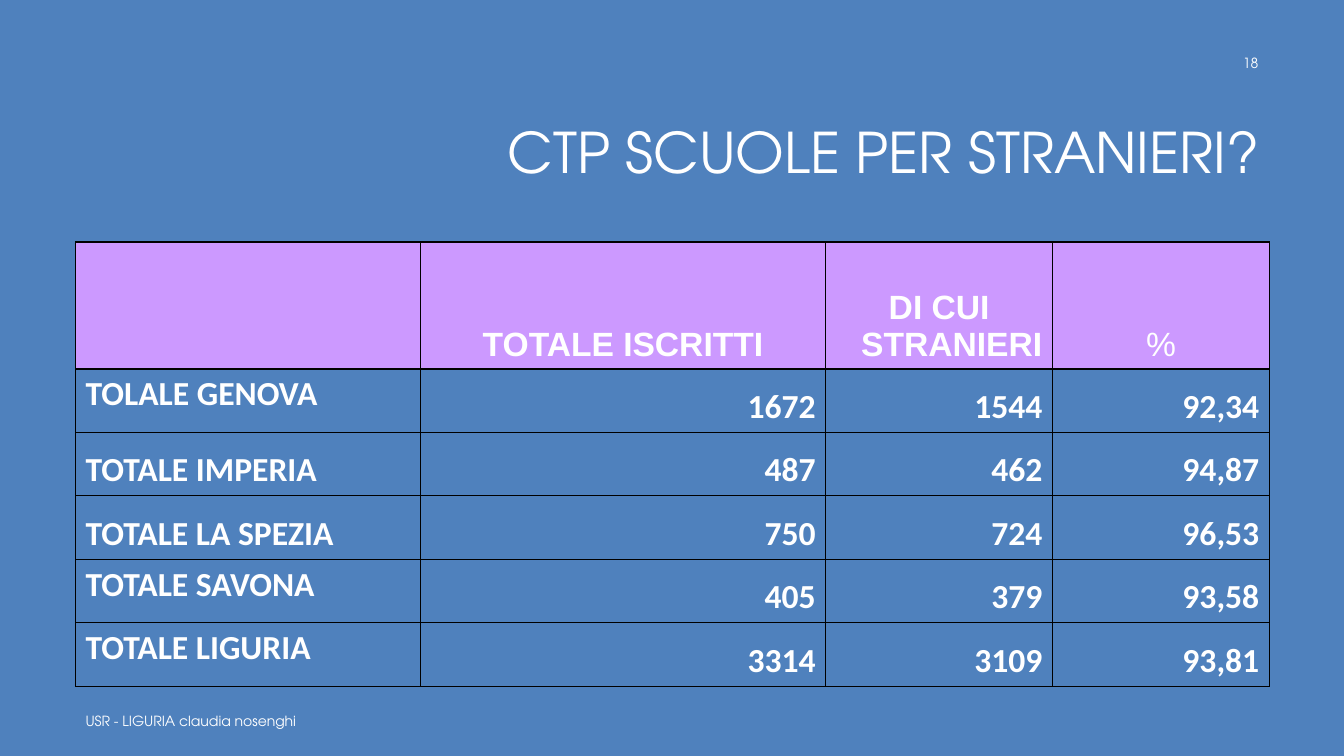
from lxml import etree
from pptx import Presentation
from pptx.dml.color import RGBColor
from pptx.enum.text import MSO_ANCHOR, MSO_AUTO_SIZE, PP_ALIGN
from pptx.oxml.ns import qn
from pptx.util import Inches, Pt

LEFT, CENTER, RIGHT = PP_ALIGN.LEFT, PP_ALIGN.CENTER, PP_ALIGN.RIGHT
TOP, MIDDLE, BOTTOM = MSO_ANCHOR.TOP, MSO_ANCHOR.MIDDLE, MSO_ANCHOR.BOTTOM
NO_AUTOFIT = MSO_AUTO_SIZE.NONE

# Content
TITLE = "CTP SCUOLE PER STRANIERI?"
FOOTER = "USR - LIGURIA claudia nosenghi"
PAGE_NUMBER = "18"
HEADINGS = ("", "TOTALE ISCRITTI", "DI CUI STRANIERI", "%")
PROVINCES = [
    ("TOLALE GENOVA", "1672", "1544", "92,34"),
    ("TOTALE IMPERIA", "487", "462", "94,87"),
    ("TOTALE LA SPEZIA", "750", "724", "96,53"),
    ("TOTALE SAVONA", "405", "379", "93,58"),
    ("TOTALE LIGURIA", "3314", "3109", "93,81"),
]
TOP_LABELS = {"TOLALE GENOVA", "TOTALE SAVONA", "TOTALE LIGURIA"}

# Format
COLORS = {"background": "4F81BD", "heading": "CC99FF", "text": "FFFFFF", "border": "000000"}
DISPLAY_FONT = "TeX Gyre Adventor"
TITLE_FONT = {"name": DISPLAY_FONT, "size": Pt(40), "bold": False}
SMALL_FONT = {"name": DISPLAY_FONT, "size": Pt(10)}
HEADING_FONT = {"name": "Arial", "size": Pt(24), "bold": True}
PERCENT_FONT = {**HEADING_FONT, "bold": False}
BODY_FONT = {"name": "Calibri", "size": Pt(24), "bold": True}
COLUMN_WIDTHS = (3.42, 4.02, 2.25, 2.15)
HEADING_HEIGHT, PROVINCE_HEIGHT = 1.26, 0.63


def color(name):
    return RGBColor.from_string(COLORS[name])


def write(frame, text, font_format, align):
    paragraph = frame.paragraphs[0]
    paragraph.text = text
    paragraph.alignment = align
    for key, value in font_format.items():
        setattr(paragraph.font, key, value)
    paragraph.font.color.rgb = color("text")
    return paragraph


def set_up(frame):
    for key, value in {"word_wrap": True, "auto_size": NO_AUTOFIT,
                       "vertical_anchor": MIDDLE}.items():
        setattr(frame, key, value)


def add_borders(cell):
    properties = cell._tc.get_or_add_tcPr()
    for side in ("a:lnL", "a:lnR", "a:lnT", "a:lnB"):
        line = etree.SubElement(properties, qn(side), w=str(Pt(1)))
        fill = etree.SubElement(line, qn("a:solidFill"))
        etree.SubElement(fill, qn("a:srgbClr"), val=COLORS["border"])


def fill_cell(cell, text, row, column):
    heading = row == 0
    add_borders(cell)
    if heading:
        cell.fill.solid()
        cell.fill.fore_color.rgb = color("heading")
        font_format = PERCENT_FONT if text == "%" else HEADING_FONT
        align = CENTER
    else:
        cell.fill.background()
        font_format = BODY_FONT
        align = RIGHT if column else LEFT
    cell.vertical_anchor = TOP if text in TOP_LABELS else BOTTOM
    if text:
        paragraph = write(cell.text_frame, text, font_format, align)
        indents = paragraph._p.get_or_add_pPr()
        indents.set("marL", str(Inches(0.25)))
        indents.set("indent", str(Inches(-0.25)))


# Slide
deck = Presentation()
deck.slide_width, deck.slide_height = Inches(13.33), Inches(7.5)
slide = deck.slides.add_slide(deck.slide_layouts[5])
slide.background.fill.solid()
slide.background.fill.fore_color.rgb = color("background")

# Title
title = slide.shapes.title
title.left, title.top = Inches(3.17), Inches(0.84)
title.width, title.height = Inches(9.42), Inches(1.41)
set_up(title.text_frame)
write(title.text_frame, TITLE, TITLE_FONT, RIGHT).line_spacing = 0.9

# Footer and page number
for text, left, top, width, align in (
    (FOOTER, 0.75, 6.95, 8.5, LEFT),
    (PAGE_NUMBER, 9.58, 0.42, 3, RIGHT),
):
    label = slide.shapes.add_textbox(Inches(left), Inches(top), Inches(width), Inches(0.4))
    set_up(label.text_frame)
    write(label.text_frame, text, SMALL_FONT, align)

# Enrolment table
records = [HEADINGS, *PROVINCES]
row_heights = [HEADING_HEIGHT] + [PROVINCE_HEIGHT] * len(PROVINCES)
enrolment = slide.shapes.add_table(
    len(records), len(HEADINGS), Inches(0.75), Inches(2.4),
    Inches(sum(COLUMN_WIDTHS)), Inches(sum(row_heights))).table
enrolment.first_row = enrolment.horz_banding = False
for column, width in zip(enrolment.columns, COLUMN_WIDTHS):
    column.width = Inches(width)
for row, height in zip(enrolment.rows, row_heights):
    row.height = Inches(height)
for r, record in enumerate(records):
    for c, text in enumerate(record):
        fill_cell(enrolment.cell(r, c), text, r, c)

deck.save("out.pptx")
